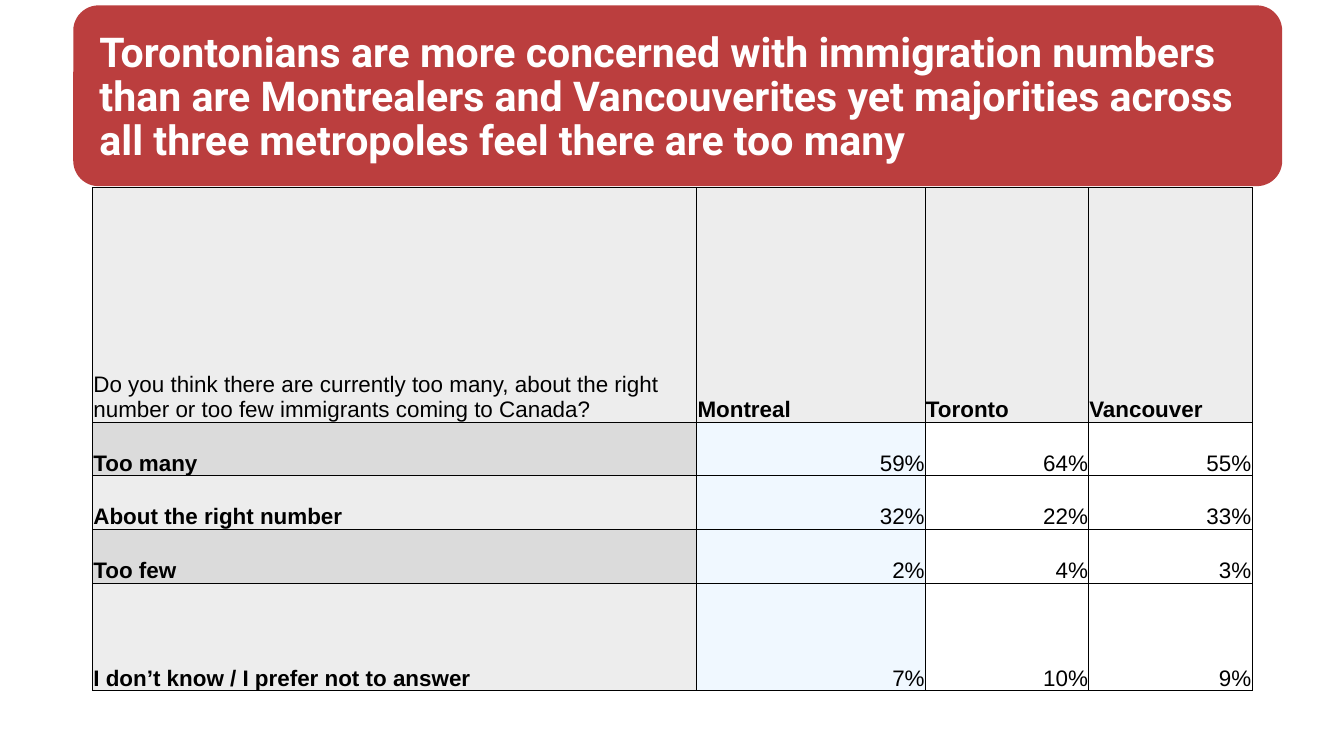
"""Build a slide comparing views on immigration numbers in three Canadian cities."""
from lxml.etree import SubElement
from pptx import Presentation
from pptx.dml.color import RGBColor
from pptx.enum.shapes import MSO_SHAPE
from pptx.enum.text import MSO_ANCHOR, MSO_AUTO_SIZE, PP_ALIGN
from pptx.oxml.ns import qn
from pptx.util import Inches, Pt

COLORS = {
    "banner": "BB3E3E",
    "white": "FFFFFF",
    "black": "000000",
    "light": "EDEDED",
    "dark": "DBDBDB",
    "highlight": "F0F8FF",
}
COLUMN_WIDTHS = [8.99, 3.4, 2.43, 2.43]
ROW_HEIGHTS = [3.49, 0.8, 0.8, 0.8, 1.6]
ANSWERS = [
    ["Do you think there are currently too many, about the right number "
     "or too few immigrants coming to Canada?", "Montreal", "Toronto", "Vancouver"],
    ["Too many", "59%", "64%", "55%"],
    ["About the right number", "32%", "22%", "33%"],
    ["Too few", "2%", "4%", "3%"],
    ["I don’t know / I prefer not to answer", "7%", "10%", "9%"],
]


def style_text(para, font_name, size, color, bold):
    for span in para.runs:
        span.font.name = font_name
        span.font.size = Pt(size)
        span.font.bold = bold
        span.font.color.rgb = RGBColor.from_string(COLORS[color])


def add_borders(cell):
    properties = cell._tc.get_or_add_tcPr()
    for side in ("lnL", "lnR", "lnT", "lnB"):
        line = SubElement(properties, qn(f"a:{side}"), w=str(Pt(1)))
        fill = SubElement(line, qn("a:solidFill"))
        SubElement(fill, qn("a:srgbClr"), val=COLORS["black"])


deck = Presentation()
deck.slide_width = Inches(20)
deck.slide_height = Inches(11.25)
page = deck.slides.add_slide(deck.slide_layouts[5])

title = page.shapes.title
title.left, title.top = Inches(1.38), Inches(0.37)
title.width, title.height = Inches(17.25), Inches(2.18)
title.text_frame.text = (
    "Torontonians are more concerned with immigration numbers than are Montrealers "
    "and Vancouverites yet majorities across all three metropoles feel there are too many"
)
title.text_frame.word_wrap = True
title.text_frame.auto_size = MSO_AUTO_SIZE.NONE
title.text_frame.vertical_anchor = MSO_ANCHOR.MIDDLE
heading = title.text_frame.paragraphs[0]
heading.alignment = PP_ALIGN.LEFT
heading.line_spacing = 0.9
style_text(heading, "Roboto", 44, "white", True)

banner = page.shapes.add_shape(
    MSO_SHAPE.ROUNDED_RECTANGLE, Inches(1.09), Inches(0.08), Inches(17.99), Inches(2.69)
)
banner.adjustments[0] = 0.14
banner.shadow.inherit = False
banner.fill.solid()
banner.fill.fore_color.rgb = RGBColor.from_string(COLORS["banner"])
banner.line.fill.background()
title.element.addprevious(banner.element)

table = page.shapes.add_table(
    len(ROW_HEIGHTS), len(COLUMN_WIDTHS),
    Inches(1.38), Inches(2.79), Inches(sum(COLUMN_WIDTHS)), Inches(sum(ROW_HEIGHTS)),
).table
for column, width in zip(table.columns, COLUMN_WIDTHS):
    column.width = Inches(width)
for row, height in zip(table.rows, ROW_HEIGHTS):
    row.height = Inches(height)

for row_index, answer in enumerate(ANSWERS):
    for column_index, text in enumerate(answer):
        is_header = row_index == 0
        is_label = column_index == 0
        if is_header or is_label:
            color = "dark" if row_index % 2 else "light"
        else:
            color = "highlight" if column_index == 1 else "white"

        cell = table.cell(row_index, column_index)
        cell.margin_left = cell.margin_right = cell.margin_top = Inches(0.01)
        cell.margin_bottom = 0
        cell.vertical_anchor = MSO_ANCHOR.BOTTOM
        add_borders(cell)
        cell.fill.solid()
        cell.fill.fore_color.rgb = RGBColor.from_string(COLORS[color])

        para = cell.text_frame.paragraphs[0]
        para.text = text
        para.alignment = PP_ALIGN.LEFT if is_header or is_label else PP_ALIGN.RIGHT
        style_text(para, "Arial", 24, "black", is_header != is_label)

deck.save("out.pptx")
